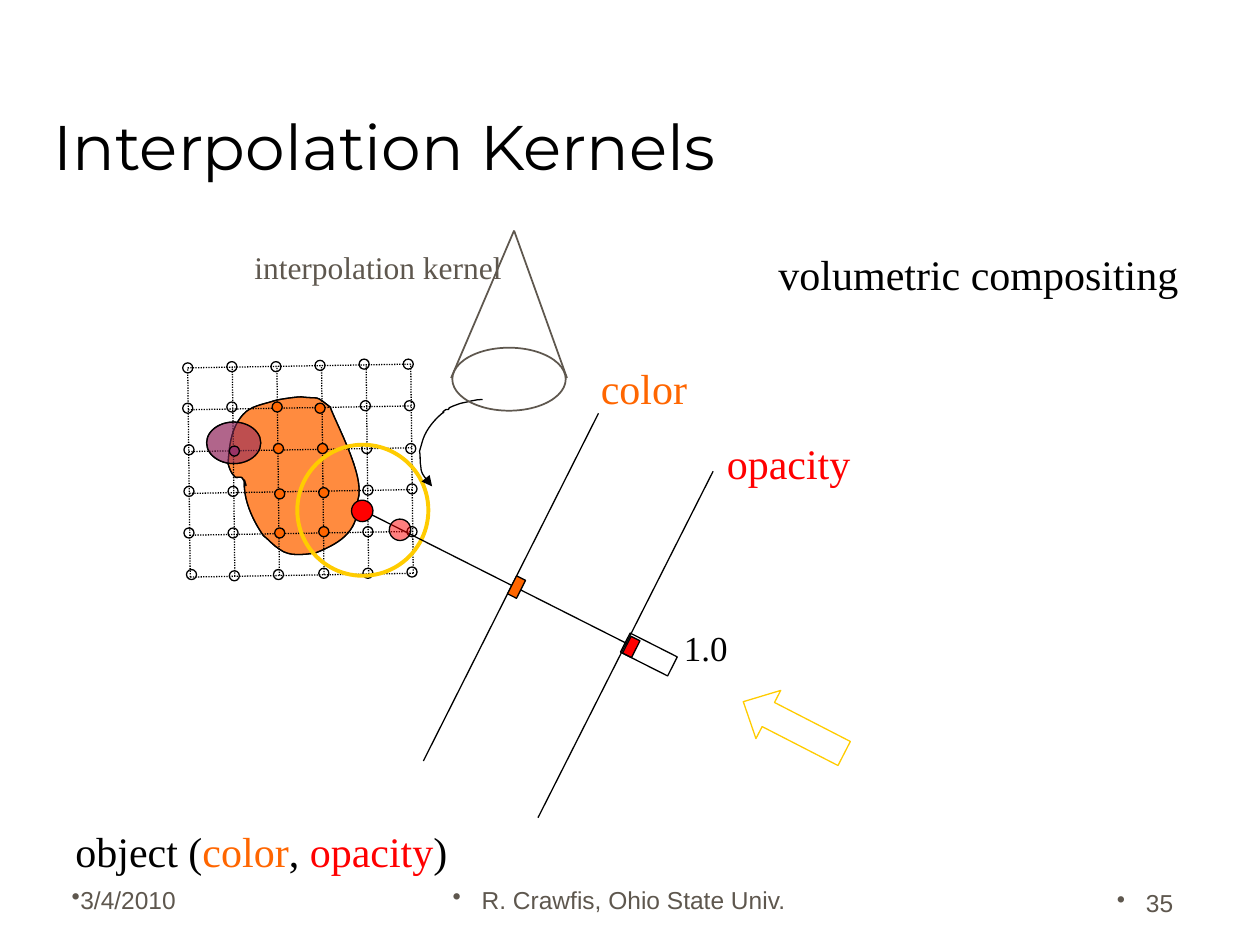
from typing import NamedTuple, Optional

from lxml import etree
from pptx import Presentation
from pptx.dml.color import RGBColor
from pptx.enum.dml import MSO_LINE
from pptx.enum.shapes import MSO_CONNECTOR, MSO_SHAPE
from pptx.enum.text import MSO_ANCHOR, MSO_AUTO_SIZE, PP_ALIGN
from pptx.oxml.ns import qn
from pptx.util import Inches, Pt

OVAL, RECTANGLE, LEFT_ARROW = MSO_SHAPE.OVAL, MSO_SHAPE.RECTANGLE, MSO_SHAPE.LEFT_ARROW
STRAIGHT = MSO_CONNECTOR.STRAIGHT
DOTTED = MSO_LINE.ROUND_DOT
TOP, BOTTOM = MSO_ANCHOR.TOP, MSO_ANCHOR.BOTTOM
LEFT, CENTER, RIGHT = PP_ALIGN.LEFT, PP_ALIGN.CENTER, PP_ALIGN.RIGHT
GROW = MSO_AUTO_SIZE.SHAPE_TO_FIT_TEXT

BLACK = RGBColor(0x00, 0x00, 0x00)
GRAY = RGBColor(0x5E, 0x57, 0x4E)
ORANGE = RGBColor(0xFF, 0x66, 0x00)
RED = RGBColor(0xFF, 0x00, 0x00)
YELLOW = RGBColor(0xFF, 0xCC, 0x00)
PURPLE = RGBColor(0x99, 0x33, 0x66)
SERIF = "Times New Roman"

Point = tuple[float, float]
Box = tuple[float, float, float, float]


class Label(NamedTuple):
    box: Box
    runs: list[tuple[str, RGBColor]]
    size: float = 24
    font: str = SERIF
    anchor: MSO_ANCHOR = TOP
    align: PP_ALIGN = LEFT
    bullet_indent: Optional[float] = None
    right_inset: float = 0.1


class Figure(NamedTuple):
    kind: MSO_SHAPE
    box: Box
    fill: Optional[RGBColor] = None
    line: RGBColor = BLACK
    width: float = 0.75
    rotation: float = 0
    opacity: int = 100


LABELS = [
    # Footer
    Label((0.47, 6.81, 2.08, 0.5), [("3/4/2010", GRAY)], 14, "Arial", BOTTOM, LEFT, 0),
    Label((3.42, 6.81, 3.17, 0.5), [("R. Crawfis, Ohio State Univ.", GRAY)], 14, "Arial",
          BOTTOM, CENTER, 0.23, 0.28),
    Label((7.33, 6.83, 2.08, 0.5), [("35", GRAY)], 14, "Arial", BOTTOM, RIGHT, 0.23),
    # Title and legends
    Label((0.33, 0.25, 9.33, 1.25), [("Interpolation Kernels", BLACK)], 36, "Montserrat", BOTTOM),
    Label((4.67, 2.83, 3.92, 0.5), [("color", ORANGE)]),
    Label((5.67, 3.42, 3.92, 0.5), [("opacity", RED)]),
    Label((0.5, 6.5, 3.25, 0.5), [("object (", BLACK), ("color", ORANGE), (", ", BLACK),
                                  ("opacity", RED), (")", BLACK)]),
]
FULL_OPACITY = Label((5.33, 4.92, 1.25, 0.43), [("1.0", BLACK)], 20)
COMPOSITING = Label((6.08, 1.92, 3.62, 0.5), [("volumetric compositing", BLACK)])
KERNEL_NAME = Label((1.92, 1.92, 2.42, 0.4), [("interpolation kernel", GRAY)], 18)

# Curves: a start point, then two control points and an end point per segment
OBJECT_CURVE = [
    (1.94, 3.81), (1.93, 3.96), (2, 4.12), (2.09, 4.25), (2.13, 4.28), (2.17, 4.33), (2.22, 4.36),
    (2.3, 4.42), (2.41, 4.4), (2.5, 4.39), (2.73, 4.3), (2.85, 4.2), (2.84, 3.97),
    (2.9, 3.79), (2.69, 3.41), (2.62, 3.23), (2.49, 3.13), (2.55, 3.17), (2.39, 3.15),
    (2.35, 3.15), (2.21, 3.17), (2.18, 3.18), (2.09, 3.21), (1.99, 3.22), (1.93, 3.29),
    (1.83, 3.4), (1.82, 3.55), (1.81, 3.68), (1.82, 3.71), (1.83, 3.75), (1.86, 3.78),
    (1.87, 3.8), (1.9, 3.78), (1.92, 3.79), (1.94, 3.81), (1.97, 3.91), (1.94, 3.81),
]
POINTER_CURVE = [
    (3.83, 3.17), (3.77, 3.17), (3.72, 3.19), (3.66, 3.2), (3.63, 3.21), (3.6, 3.22), (3.58, 3.23),
    (3.57, 3.23), (3.56, 3.24), (3.56, 3.25), (3.55, 3.25), (3.54, 3.25), (3.54, 3.25),
    (3.48, 3.29), (3.55, 3.26), (3.51, 3.28), (3.45, 3.33), (3.39, 3.4), (3.36, 3.48),
    (3.35, 3.51), (3.34, 3.55), (3.33, 3.58), (3.34, 3.62), (3.33, 3.66), (3.34, 3.7),
    (3.34, 3.75), (3.39, 3.82), (3.42, 3.84), (3.42, 3.85), (3.43, 3.86), (3.43, 3.86),
]
# Hand-placed voxel nodes: left and top of each circle, row by row
NODES = [
    [(1.45, 2.88), (1.8, 2.87), (2.15, 2.87), (2.5, 2.86), (2.85, 2.85), (3.2, 2.85)],
    [(1.45, 3.2), (1.8, 3.19), (2.16, 3.19), (2.5, 3.2), (2.86, 3.18), (3.21, 3.18)],
    [(1.46, 3.53), (1.82, 3.54), (2.17, 3.52), (2.52, 3.52), (2.87, 3.52), (3.22, 3.52)],
    [(1.46, 3.86), (1.81, 3.86), (2.18, 3.88), (2.53, 3.87), (2.88, 3.85), (3.23, 3.84)],
    [(1.46, 4.19), (1.81, 4.19), (2.18, 4.19), (2.53, 4.18), (2.88, 4.18), (3.23, 4.18)],
    [(1.48, 4.52), (1.82, 4.53), (2.17, 4.52), (2.53, 4.51), (2.88, 4.51), (3.23, 4.5)],
]
GRID_SIZE = len(NODES)
OBJECT_NODES = [NODES[row][column] for row in (1, 2, 3, 4) for column in (2, 3)]
KERNEL_NODE = NODES[2][1]
SMALL_KERNEL = Figure(OVAL, (1.64, 3.35, 0.43, 0.33), PURPLE, opacity=50)
RAY_FIGURES = [
    Figure(OVAL, (3.09, 4.12, 0.17, 0.17), RED, rotation=26.7, opacity=50),
    Figure(OVAL, (2.79, 3.97, 0.17, 0.17), RED, rotation=26.7),
    Figure(RECTANGLE, (4.97, 5.06, 0.08, 0.15), RED, rotation=26.8),
    Figure(RECTANGLE, (4.06, 4.58, 0.08, 0.16), ORANGE, rotation=26.8),
    Figure(RECTANGLE, (4.94, 5.11, 0.42, 0.17), rotation=26.8),
]


def add_label(shapes, label: Label) -> None:
    frame = shapes.add_textbox(*map(Inches, label.box)).text_frame
    frame.word_wrap = True
    frame.vertical_anchor = label.anchor
    frame.margin_right = Inches(label.right_inset)
    if label.font == SERIF:
        frame.auto_size = GROW
    paragraph = frame.paragraphs[0]
    paragraph.alignment = label.align
    if label.bullet_indent is not None:
        properties = paragraph._p.get_or_add_pPr()
        properties.set("marL", str(Inches(label.bullet_indent)))
        properties.set("indent", str(-Inches(label.bullet_indent)))
        etree.SubElement(properties, qn("a:buChar")).set("char", "•")
    paragraph.font.size = Pt(label.size)
    paragraph.font.name = label.font
    for text, color in label.runs:
        run = paragraph.add_run()
        run.text = text
        run.font.color.rgb = color


def style(shape, fill: Optional[RGBColor], line: RGBColor, width: float, opacity: int) -> None:
    shape.shadow.inherit = False
    shape.line.color.rgb = line
    shape.line.width = Pt(width)
    if fill is None:
        shape.fill.background()
        return
    shape.fill.solid()
    shape.fill.fore_color.rgb = fill
    if opacity < 100:
        color = shape._element.spPr.find(qn("a:solidFill"))[0]
        etree.SubElement(color, qn("a:alpha")).set("val", str(opacity * 1000))


def add_figure(shapes, figure: Figure):
    shape = shapes.add_shape(figure.kind, *map(Inches, figure.box))
    shape.rotation = figure.rotation
    style(shape, figure.fill, figure.line, figure.width, figure.opacity)
    return shape


def add_line(shapes, start: Point, end: Point, color: RGBColor = BLACK,
             width: float = 0.75, dash: Optional[MSO_LINE] = None) -> None:
    line = shapes.add_connector(STRAIGHT, *map(Inches, start + end))
    line.line.color.rgb = color
    line.line.width = Pt(width)
    if dash is not None:
        line.line.dash_style = dash
    etree.SubElement(line._element.spPr, qn("a:effectLst"))


def add_curve(shapes, controls: list[Point], closed: bool, fill: Optional[RGBColor] = None,
              opacity: int = 100):
    points = [(Inches(x), Inches(y)) for x, y in controls]
    builder = shapes.build_freeform(*points[0])
    builder.add_line_segments(points[1:], close=closed)
    shape = builder.convert_to_shape()
    # Join every three straight segments into one cubic curve
    segments = list(shape._element.iter(qn("a:lnTo")))
    for first in range(0, len(segments), 3):
        curve = etree.Element(qn("a:cubicBezTo"))
        segments[first].addprevious(curve)
        for segment in segments[first:first + 3]:
            curve.append(segment[0])
            segment.getparent().remove(segment)
    style(shape, fill, BLACK, 0.75, opacity)
    return shape


def grid_point(column: int, row: int) -> Point:
    return 1.49 + 0.354 * column + 0.004 * row, 2.92 + 0.332 * row - 0.006 * column


def add_node(shapes, corner: Point, fill: Optional[RGBColor] = None) -> None:
    add_figure(shapes, Figure(OVAL, corner + (0.08, 0.08), fill))


def add_voxel_object(shapes) -> None:
    add_curve(shapes, OBJECT_CURVE, True, ORANGE, 50)
    last = GRID_SIZE - 1
    for column in range(GRID_SIZE):
        add_line(shapes, grid_point(column, last), grid_point(column, 0), dash=DOTTED)
    for row in range(GRID_SIZE):
        add_line(shapes, grid_point(0, row), grid_point(last, row), dash=DOTTED)
    for corner in OBJECT_NODES:
        add_node(shapes, corner, ORANGE)
    add_figure(shapes, SMALL_KERNEL)
    for corner in sum(NODES, []):
        if corner not in OBJECT_NODES:
            add_node(shapes, corner, PURPLE if corner == KERNEL_NODE else None)


def main() -> None:
    presentation = Presentation()
    presentation.slide_width, presentation.slide_height = Inches(10), Inches(7.5)
    shapes = presentation.slides.add_slide(presentation.slide_layouts[6]).shapes
    for label in LABELS:
        add_label(shapes, label)

    # View direction
    arrow = add_figure(shapes, Figure(LEFT_ARROW, (5.85, 5.56, 0.9, 0.43), line=YELLOW, rotation=27.2))
    arrow.adjustments[1] = 0.52

    # Object, color and opacity planes, voxel grid
    add_curve(shapes, OBJECT_CURVE, True, ORANGE, 50)
    add_figure(shapes, SMALL_KERNEL)
    add_line(shapes, (5.66, 3.74), (4.27, 6.49))
    add_line(shapes, (4.75, 3.28), (3.36, 6.04))
    add_voxel_object(shapes.add_group_shape().shapes)

    # Kernel footprint and viewing ray
    add_figure(shapes, Figure(OVAL, (2.36, 3.53, 1.04, 1.04), line=YELLOW, width=2.25))
    ray = shapes.add_group_shape().shapes
    add_line(ray, (2.88, 4.05), (5.04, 5.14))
    for figure in RAY_FIGURES:
        add_figure(ray, figure)
    add_label(ray, FULL_OPACITY)
    add_label(shapes, COMPOSITING)

    # Interpolation kernel cone and its pointer
    pointer = add_curve(shapes, POINTER_CURVE, False)
    etree.SubElement(pointer.line._get_or_add_ln(), qn("a:tailEnd")).set("type", "triangle")
    cone = shapes.add_group_shape().shapes
    add_line(cone, (3.58, 3), (4.08, 1.83), GRAY, 1)
    add_line(cone, (4.08, 1.83), (4.5, 3), GRAY, 1)
    add_figure(cone, Figure(OVAL, (3.59, 2.76, 0.9, 0.5), line=GRAY, width=1))
    add_label(shapes, KERNEL_NAME)

    presentation.save("out.pptx")


if __name__ == "__main__":
    main()
